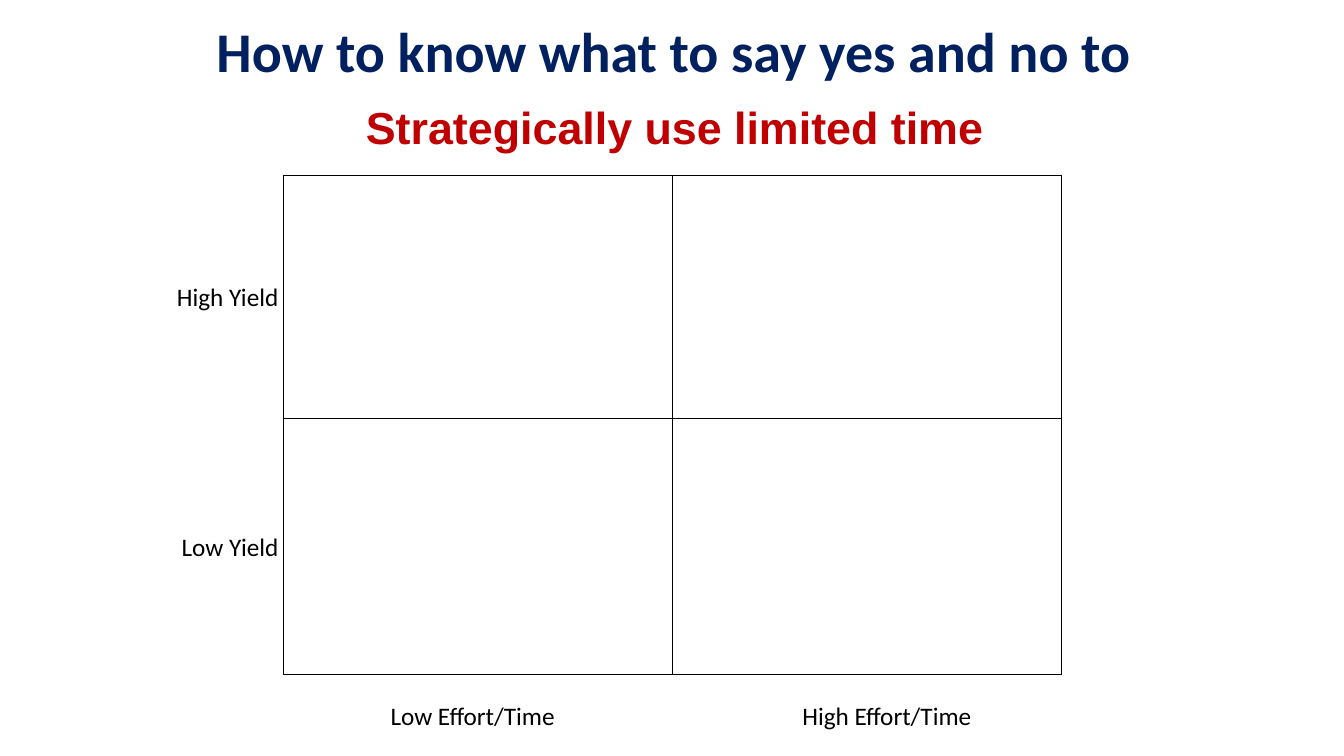
from lxml import etree
from pptx import Presentation
from pptx import util as u
from pptx.dml.color import RGBColor
from pptx.enum import text
from pptx.oxml import ns

WIDTH, HEIGHT = 13.33, 7.5
COLUMNS = [3.86, 3.86]
ROWS = [2.41, 2.54]
YIELDS = [("High Yield", 1.22), ("Low Yield", 1.17)]
EFFORTS = [("Low Effort/Time", 2.07, 0.07), ("High Effort/Time", 1.9, 0.21)]
LABEL_HEIGHT = 0.4


def colour(value):
    return RGBColor.from_string(value)


def place(shape, left, top, width, height):
    shape.left, shape.top = u.Inches(left), u.Inches(top)
    shape.width, shape.height = u.Inches(width), u.Inches(height)


def write(box, words, size, font, ink, bold=False, align=text.PP_ALIGN.CENTER):
    box.text_frame.text = words
    para = box.text_frame.paragraphs[0]
    para.alignment = align
    span = para.runs[0]
    span.font.size = u.Pt(size)
    span.font.name = font
    span.font.bold = bold
    span.font.color.rgb = colour(ink)
    return para


def add_box(page, left, top, width, height, wrap):
    box = page.shapes.add_textbox(0, 0, 0, 0)
    place(box, left, top, width, height)
    box.text_frame.word_wrap = wrap
    return box


def add_heading(page, left, top, width, height):
    title = page.shapes.title
    place(title, left, top, width, height)
    title.fill.solid()
    title.fill.fore_color.rgb = colour("FFFFFF")
    title.text_frame.vertical_anchor = text.MSO_ANCHOR.MIDDLE
    para = write(title, "How to know what to say yes and no to", 40, "Calibri", "002060", True)
    para.line_spacing = 0.9


def add_subtitle(page, left, top, width, height):
    box = add_box(page, left, top, width, height, True)
    box.text_frame.margin_top = u.Inches(0.1)
    write(box, "Strategically use limited time", 32, "Arial", "C00000", True)


def add_border(cell):
    properties = cell._tc.get_or_add_tcPr()
    for side in ("a:lnL", "a:lnR", "a:lnT", "a:lnB"):
        line = etree.SubElement(properties, ns.qn(side), w=str(u.Pt(1)))
        fill = etree.SubElement(line, ns.qn("a:solidFill"))
        etree.SubElement(fill, ns.qn("a:srgbClr"), val="000000")


def add_matrix(page, left, top, width, height):
    frame = page.shapes.add_table(
        len(ROWS), len(COLUMNS), u.Inches(left), u.Inches(top), u.Inches(width), u.Inches(height)
    )
    table = frame.table
    table.first_row = table.horz_banding = False
    for column, size in zip(table.columns, COLUMNS):
        column.width = u.Inches(size)
    for row, size in zip(table.rows, ROWS):
        row.height = u.Inches(size)
    for cell in table.iter_cells():
        add_border(cell)
        cell.fill.background()


def add_yield_labels(page, right, top):
    for (words, width), row in zip(YIELDS, ROWS):
        middle = top + row / 2
        box = add_box(page, right - width, middle - LABEL_HEIGHT / 2, width, LABEL_HEIGHT, False)
        write(box, words, 18, "Calibri", "000000", align=text.PP_ALIGN.RIGHT)
        top += row


def add_effort_labels(page, left, top):
    for (words, width, shift), column in zip(EFFORTS, COLUMNS):
        middle = left + column / 2 + shift
        box = add_box(page, middle - width / 2, top, width, LABEL_HEIGHT, False)
        box.text_frame.vertical_anchor = text.MSO_ANCHOR.MIDDLE
        write(box, words, 18, "Calibri", "000000", align=text.PP_ALIGN.LEFT)
        left += column


def build_matrix_slide(deck):
    page = deck.slides.add_slide(deck.slide_layouts[5])
    left, top = 2.81, 1.74
    add_subtitle(page, 2.1, 0.89, 9.19, 1.11)
    add_heading(page, 1.92, 0.08, 9.52, 0.92)
    add_matrix(page, left, top, sum(COLUMNS), sum(ROWS))
    add_yield_labels(page, left + 0.05, top)
    add_effort_labels(page, left, top + sum(ROWS) + 0.21)


def main():
    deck = Presentation()
    deck.slide_width, deck.slide_height = u.Inches(WIDTH), u.Inches(HEIGHT)
    build_matrix_slide(deck)
    deck.save("out.pptx")


if __name__ == "__main__":
    main()
